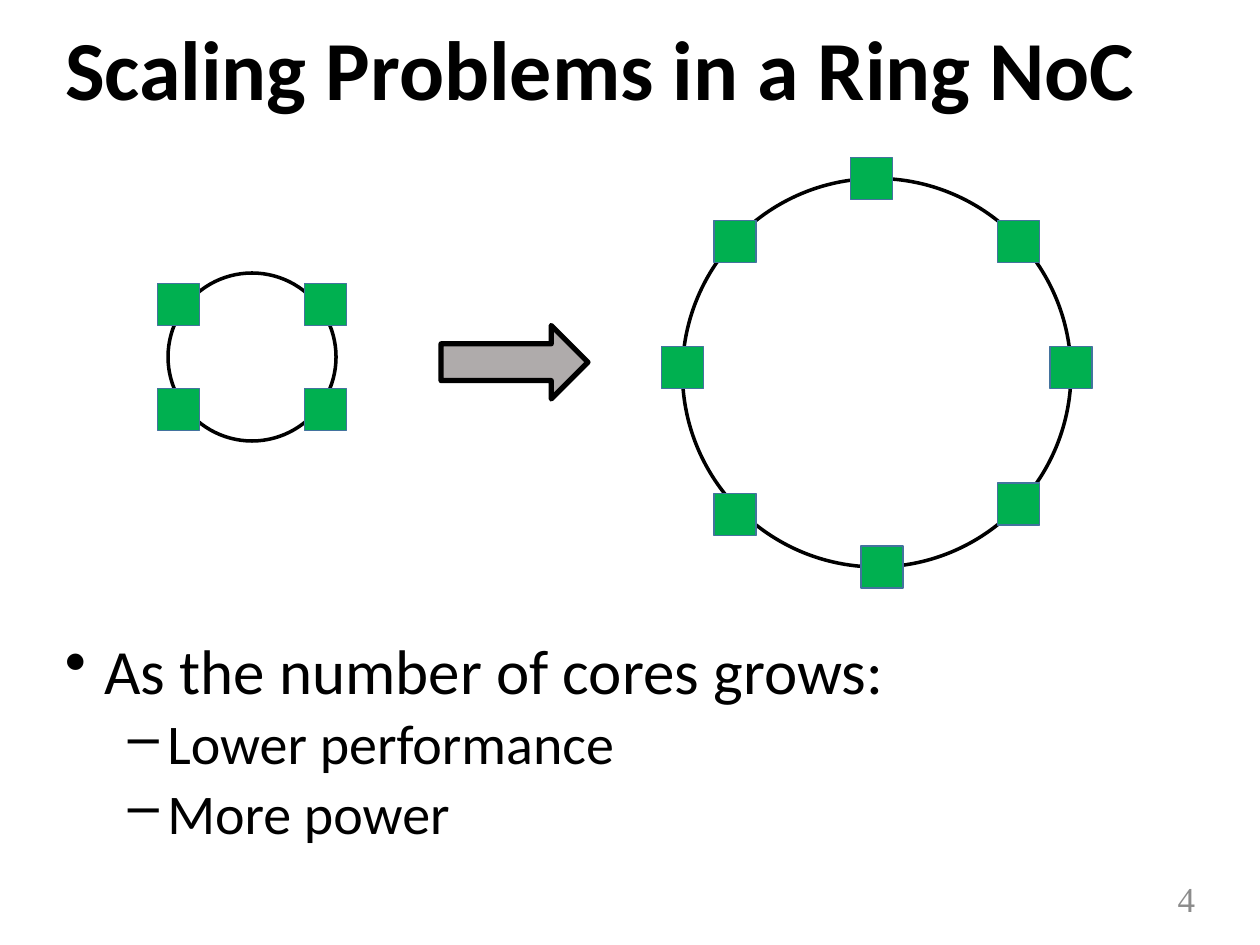
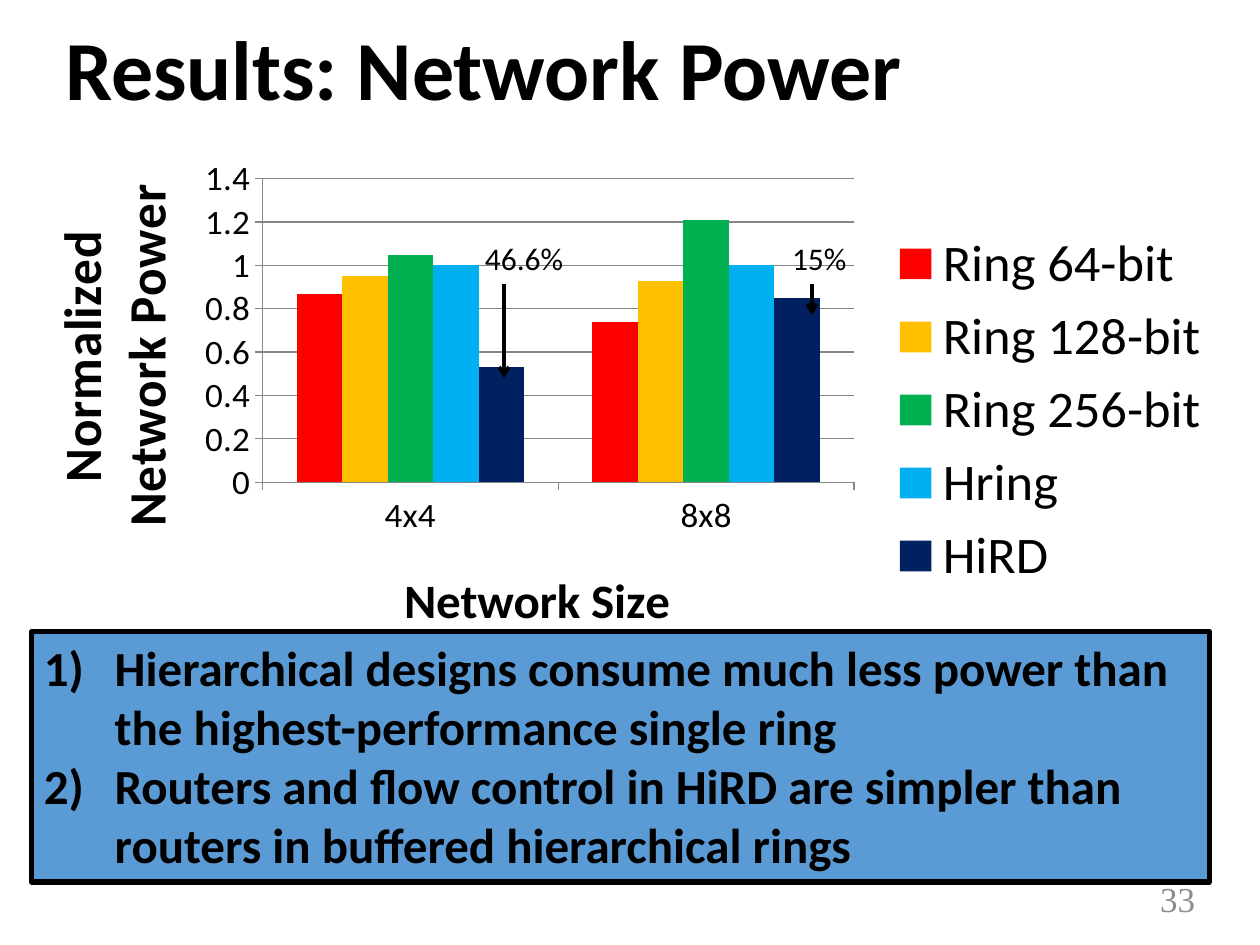
from dataclasses import dataclass

from lxml import etree
from pptx import Presentation
from pptx.chart.data import CategoryChartData
from pptx.dml.color import RGBColor
from pptx.enum.chart import XL_CHART_TYPE as ChartType, XL_LEGEND_POSITION as LegendPosition, XL_TICK_MARK as TickMark
from pptx.enum.shapes import MSO_CONNECTOR as Connector, MSO_SHAPE as Preset
from pptx.enum.text import MSO_ANCHOR as Anchor, MSO_AUTO_SIZE as AutoSize, PP_ALIGN as Align
from pptx.oxml import parse_xml
from pptx.oxml.ns import nsdecls, qn
from pptx.util import Pt

BLACK, GREEN, CORE_EDGE = "000000", "00B050", "43739E"
ARROW_GRAY, NUMBER_GRAY, AXIS_GRAY, PANEL_BLUE = "AFABAB", "8C8C8C", "868686", "5B9BD5"
BODY_FONT, NUMBER_FONT = "Calibri", "Times New Roman"
CORE_SIZE = 24


@dataclass(frozen=True)
class Box:
    left: float
    top: float
    width: float
    height: float

    def lengths(self) -> tuple:
        return Pt(self.left), Pt(self.top), Pt(self.width), Pt(self.height)


@dataclass(frozen=True)
class Ring:
    box: Box
    cores: tuple


@dataclass(frozen=True)
class Bullet:
    text: str
    size: int
    mark: str
    margin: float
    before: int


@dataclass(frozen=True)
class Saving:
    label: str
    label_box: Box
    x: float
    bottom: float


@dataclass(frozen=True)
class Series:
    name: str
    values: tuple
    color: str


TITLE_BOX = Box(30, 12, 660, 60)
NUMBER_BOX = Box(636, 499, 54, 29)

RINGS = (
    Ring(Box(390, 102, 222, 222),
         ((378, 198), (600, 198), (486, 90), (492, 312),
          (408, 126), (570, 126), (408, 282), (570, 276))),
    Ring(Box(96, 156, 96, 96),
         tuple((x, y) for y in (162, 222) for x in (174, 90))),
)

BULLETS = (
    Bullet("As the number of cores grows:", 36, "•", 22.5, 0),
    Bullet("Lower performance", 32, "–", 58.5, 5),
    Bullet("More power", 32, "–", 58.5, 5),
)

NETWORK_SIZES = ("4x4", "8x8")
POWER = (
    Series("Ring 64-bit", (0.87, 0.74), "FF0000"),
    Series("Ring 128-bit", (0.95, 0.93), "FFC000"),
    Series("Ring 256-bit", (1.05, 1.21), GREEN),
    Series("Hring", (1, 1), "00B0F0"),
    Series("HiRD", (0.53, 0.85), "002060"),
)

SAVINGS = (
    Saving("15%", Box(445.5, 133, 46, 29), 464, 180),
    Saving("46.6%", Box(270, 133, 60, 29), 288, 216),
)

CONCLUSIONS = (
    "Hierarchical designs consume much less power than the highest-performance single ring",
    "Routers and flow control in HiRD are simpler than routers in buffered hierarchical rings",
)


def rgb(color: str) -> RGBColor:
    return RGBColor.from_string(color)


def style_font(font, size: float, bold: bool = False, color: str = BLACK, name: str = BODY_FONT) -> None:
    font.size = Pt(size)
    font.bold = bold
    font.name = name
    font.color.rgb = rgb(color)


def add_text(paragraph, text: str, *, size: float, bold: bool = False, color: str = BLACK,
             font: str = BODY_FONT, align=Align.LEFT, spacing: float = 1, before: float = 0) -> None:
    run = paragraph.add_run()
    run.text = text
    style_font(run.font, size, bold, color, font)
    paragraph.alignment = align
    paragraph.line_spacing = spacing
    paragraph.space_before = Pt(before)


def next_paragraph(frame, index: int):
    return frame.paragraphs[0] if index == 0 else frame.add_paragraph()


def set_marker(paragraph, margin: float, hanging: float, tag: str, **attributes: str) -> None:
    properties = paragraph._p.get_or_add_pPr()
    properties.set("marL", str(Pt(margin)))
    properties.set("indent", str(-Pt(hanging)))
    etree.SubElement(properties, qn(tag), attributes)


def add_text_box(slide, box: Box, wrap: bool = True):
    frame = slide.shapes.add_textbox(*box.lengths()).text_frame
    frame.word_wrap = wrap
    return frame


def add_preset(slide, preset, box: Box, *, fill: str | None, line: str, weight: float):
    shape = slide.shapes.add_shape(preset, *box.lengths())
    shape.shadow.inherit = False
    if fill:
        shape.fill.solid()
        shape.fill.fore_color.rgb = rgb(fill)
    else:
        shape.fill.background()
    shape.line.color.rgb = rgb(line)
    shape.line.width = Pt(weight)
    return shape


def add_titled_slide(presentation, title: str, number: int):
    slide = presentation.slides.add_slide(presentation.slide_layouts[5])
    heading = slide.shapes.title
    heading.left, heading.top, heading.width, heading.height = TITLE_BOX.lengths()
    frame = heading.text_frame
    frame.auto_size = AutoSize.NONE
    frame.vertical_anchor = Anchor.MIDDLE
    add_text(frame.paragraphs[0], title, size=48, bold=True, spacing=0.9)
    number_frame = add_text_box(slide, NUMBER_BOX)
    number_frame.vertical_anchor = Anchor.MIDDLE
    add_text(number_frame.paragraphs[0], str(number), size=20, color=NUMBER_GRAY,
             font=NUMBER_FONT, align=Align.RIGHT)
    return slide


def draw_ring(slide, ring: Ring) -> None:
    add_preset(slide, Preset.OVAL, ring.box, fill=None, line=BLACK, weight=2)
    for left, top in ring.cores:
        add_preset(slide, Preset.RECTANGLE, Box(left, top, CORE_SIZE, CORE_SIZE),
                   fill=GREEN, line=CORE_EDGE, weight=1)


def build_scaling_slide(presentation) -> None:
    slide = add_titled_slide(presentation, "Scaling Problems in a Ring NoC", 4)
    frame = add_text_box(slide, Box(30, 362, 660, 136))
    for index, bullet in enumerate(BULLETS):
        paragraph = next_paragraph(frame, index)
        add_text(paragraph, bullet.text, size=bullet.size, spacing=0.9, before=bullet.before)
        set_marker(paragraph, bullet.margin, 22.5, "a:buChar", char=bullet.mark)
    add_preset(slide, Preset.RIGHT_ARROW, Box(252, 186, 84, 42),
               fill=ARROW_GRAY, line=BLACK, weight=3)
    for ring in RINGS:
        draw_ring(slide, ring)


def manual_layout(target: str, **fractions: float):
    inner = '<c:layoutTarget val="inner"/>' if target == "plot" else ""
    modes = "".join(f'<c:{axis}Mode val="edge"/>' for axis in "xy")
    values = "".join(f'<c:{key} val="{value}"/>' for key, value in fractions.items())
    return parse_xml(f'<c:layout {nsdecls("c")}><c:manualLayout>{inner}{modes}{values}'
                     '</c:manualLayout></c:layout>')


def title_axis(axis, lines: tuple, size: float, x: float, y: float, rotation: int = 0) -> None:
    title = axis.axis_title
    frame = title.text_frame
    for index, line in enumerate(lines):
        add_text(next_paragraph(frame, index), line, size=size, bold=True, align=Align.CENTER)
    frame._txBody.find(qn("a:bodyPr")).set("rot", str(rotation * 60000))
    element = title._element
    for layout in element.findall(qn("c:layout")):
        element.remove(layout)
    element.find(qn("c:tx")).addnext(manual_layout("title", x=x, y=y))


def add_power_chart(slide) -> None:
    data = CategoryChartData()
    data.categories = NETWORK_SIZES
    for series in POWER:
        data.add_series(series.name, series.values)
    chart = slide.shapes.add_chart(ChartType.COLUMN_CLUSTERED,
                                   *Box(12, 90, 690, 282).lengths(), data).chart
    style_font(chart.font, 10)
    chart.has_title = False
    chart.has_legend = True
    chart.legend.position = LegendPosition.RIGHT
    chart.legend.include_in_layout = False
    style_font(chart.legend.font, 30)

    plot = chart.plots[0]
    plot.gap_width = 150
    plot.overlap = 0
    plot.vary_by_categories = False
    for drawn, series in zip(plot.series, POWER):
        drawn.format.fill.solid()
        drawn.format.fill.fore_color.rgb = rgb(series.color)

    sizes, values = chart.category_axis, chart.value_axis
    values.minimum_scale, values.maximum_scale, values.major_unit = 0, 1.4, 0.2
    values.has_major_gridlines = True
    for axis in (sizes, values):
        axis.major_tick_mark = TickMark.OUTSIDE
        axis.minor_tick_mark = TickMark.NONE
        style_font(axis.tick_labels.font, 20)
    for line in (sizes.format.line, values.format.line, values.major_gridlines.format.line):
        line.color.rgb = rgb(AXIS_GRAY)
        line.width = Pt(0.75)
    title_axis(sizes, ("Network Size",), 28, 0.31, 0.81)
    title_axis(values, ("Normalized", "Network Power"), 30, 0.02, 0.04, rotation=-90)

    plot_area = chart._chartSpace.chart.plotArea
    for layout in plot_area.findall(qn("c:layout")):
        plot_area.remove(layout)
    plot_area.insert(0, manual_layout("plot", x=0.2, y=0.02, w=0.49, h=0.63))


def draw_saving(slide, saving: Saving) -> None:
    frame = add_text_box(slide, saving.label_box, wrap=False)
    add_text(frame.paragraphs[0], saving.label, size=18)
    arrow = slide.shapes.add_connector(Connector.STRAIGHT, Pt(saving.x), Pt(162),
                                       Pt(saving.x), Pt(saving.bottom))
    arrow.line.color.rgb = rgb(BLACK)
    arrow.line.width = Pt(2)
    etree.SubElement(arrow.line._get_or_add_ln(), qn("a:tailEnd"), type="arrow")
    etree.SubElement(arrow._element.spPr, qn("a:effectLst"))


def build_power_slide(presentation) -> None:
    slide = add_titled_slide(presentation, "Results: Network Power", 33)
    add_power_chart(slide)
    for saving in SAVINGS:
        draw_saving(slide, saving)
    panel = add_preset(slide, Preset.RECTANGLE, Box(18, 361, 673, 143),
                       fill=PANEL_BLUE, line=BLACK, weight=3)
    frame = panel.text_frame
    frame.word_wrap = True
    frame.vertical_anchor = Anchor.TOP
    for index, conclusion in enumerate(CONCLUSIONS):
        paragraph = next_paragraph(frame, index)
        add_text(paragraph, conclusion, size=28, bold=True)
        set_marker(paragraph, 40.5, 40.5, "a:buAutoNum", type="arabicParenR")


def main() -> None:
    presentation = Presentation()
    presentation.slide_width, presentation.slide_height = Pt(720), Pt(540)
    build_scaling_slide(presentation)
    build_power_slide(presentation)
    presentation.save("out.pptx")


if __name__ == "__main__":
    main()
